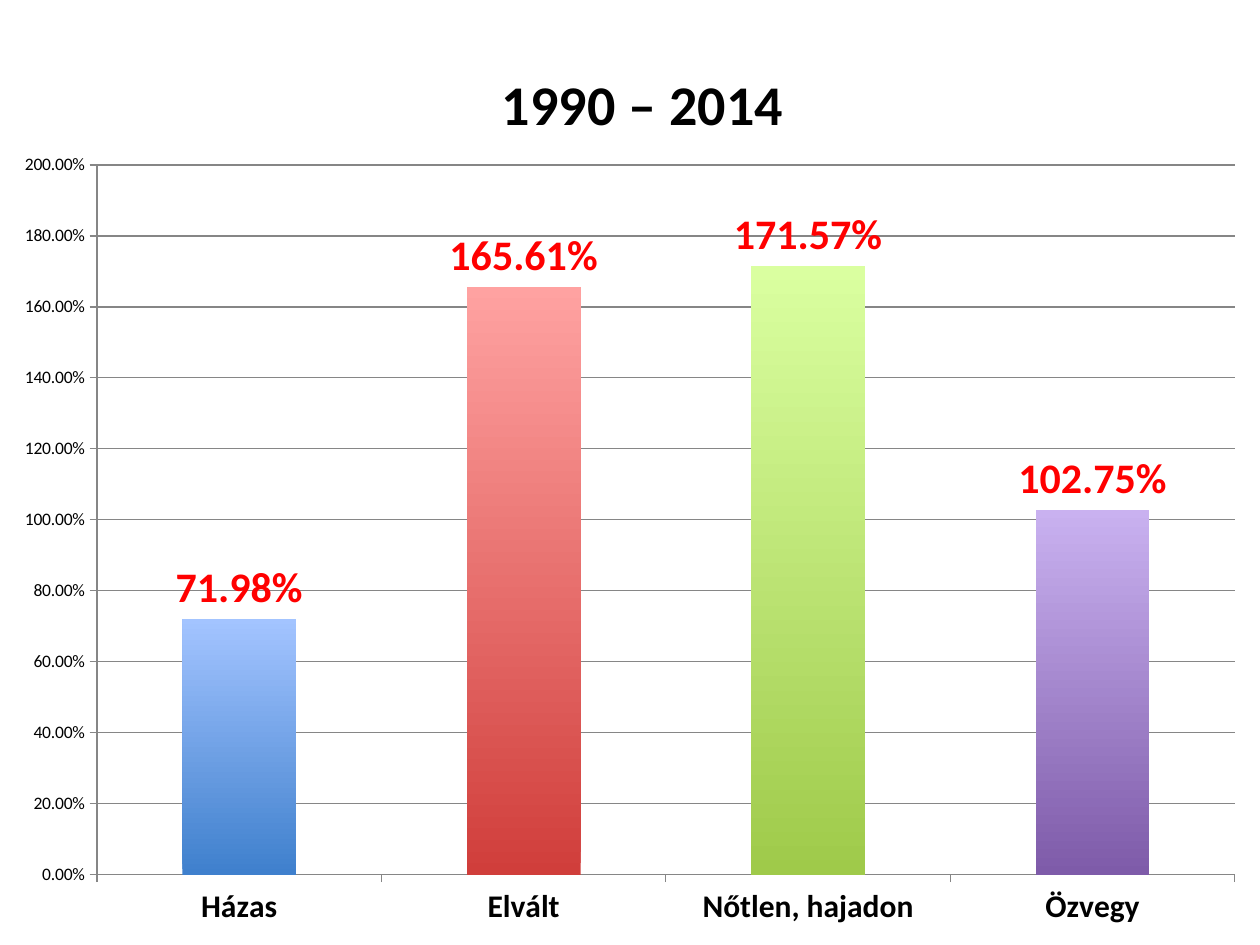
import pptx
import pptx.chart.data
import pptx.dml.color
import pptx.enum.chart
import pptx.oxml
import pptx.util
from pptx.util import Inches

BLACK, RED, GREY = "000000", "FF0000", "868686"
CHART_NS = "http://schemas.openxmlformats.org/drawingml/2006/chart"


def color(value):
    return pptx.dml.color.RGBColor.from_string(value)


def manual_layout(x, y, size=None):
    """Layout in fractions of the chart area; size is for the inner plot."""
    target = '<c:layoutTarget val="inner"/>' if size else ""
    extent = f'<c:w val="{size[0]}"/><c:h val="{size[1]}"/>' if size else ""
    return pptx.oxml.parse_xml(
        f'<c:layout xmlns:c="{CHART_NS}"><c:manualLayout>{target}'
        '<c:xMode val="edge"/><c:yMode val="edge"/>'
        f'<c:x val="{x}"/><c:y val="{y}"/>{extent}</c:manualLayout></c:layout>')


deck = pptx.Presentation()
deck.slide_width, deck.slide_height = Inches(10), Inches(7.5)
page = deck.slides.add_slide(deck.slide_layouts[6])

# Marital status: category, value, light top and dark bottom of the column
statuses = [
    ("Házas", 0.7198, "A3C4FF", "3F80CD"),
    ("Elvált", 1.6561, "FFA2A1", "D03E3B"),
    ("Nőtlen, hajadon", 1.7157, "DAFFA0", "9FCA4A"),
    ("Özvegy", 1.0275, "C9B1F0", "7E5BA9"),
]
data = pptx.chart.data.CategoryChartData(number_format="0.00%")
data.categories = [status[0] for status in statuses]
data.add_series("Series 1", [status[1] for status in statuses])
chart = page.shapes.add_chart(
    pptx.enum.chart.XL_CHART_TYPE.COLUMN_CLUSTERED,
    Inches(0), Inches(0.06), Inches(10), Inches(7.44), data).chart
chart.has_legend = False
chart.font.name = "Calibri"
chart.font.size = pptx.util.Pt(10)
chart.font.color.rgb = color(BLACK)

# Title
chart.has_title = True
title = chart.chart_title
title.include_in_layout = False
title.text_frame.text = "1990 – 2014"
title_font = title.text_frame.paragraphs[0].runs[0].font
title_font.name = "Calibri"
title_font.size = pptx.util.Pt(32)
title_font.bold = True
title_font.color.rgb = color(BLACK)
for old in title._element.findall(f"{{{CHART_NS}}}layout"):
    title._element.remove(old)
title._element.find(f"{{{CHART_NS}}}tx").addnext(manual_layout(0.39, 0.05))

# Plot area
plot_area = chart._chartSpace.chart.plotArea
for old in plot_area.findall(f"{{{CHART_NS}}}layout"):
    plot_area.remove(old)
plot_area.insert(0, manual_layout(0.077, 0.168, (0.903, 0.757)))

# Axes
for axis in (chart.category_axis, chart.value_axis):
    axis.major_tick_mark = pptx.enum.chart.XL_TICK_MARK.OUTSIDE
    axis.minor_tick_mark = pptx.enum.chart.XL_TICK_MARK.NONE
    axis.format.line.color.rgb = color(GREY)
    axis.format.line.width = pptx.util.Pt(0.75)
category_font = chart.category_axis.tick_labels.font
category_font.size = pptx.util.Pt(18)
category_font.bold = True
values = chart.value_axis
values.minimum_scale, values.maximum_scale, values.major_unit = 0, 2, 0.2
values.tick_labels.number_format = "0.00%"
values.tick_labels.number_format_is_linked = False
values.has_major_gridlines = True
values.major_gridlines.format.line.color.rgb = color(GREY)
values.major_gridlines.format.line.width = pptx.util.Pt(0.75)

# Columns
plot = chart.plots[0]
plot.gap_width = 150
plot.vary_by_categories = False
series = plot.series[0]
for index, (name, value, top, bottom) in enumerate(statuses):
    fill = series.points[index].format.fill
    fill.gradient()
    fill.gradient_angle = 90
    for stop, shade in zip(fill.gradient_stops, (bottom, top)):
        stop.color.rgb = color(shade)

# Data labels
labels = series.data_labels
labels.show_value = True
labels.number_format = "0.00%"
labels.number_format_is_linked = False
labels.position = pptx.enum.chart.XL_LABEL_POSITION.OUTSIDE_END
labels.font.size = pptx.util.Pt(24)
labels.font.bold = True
labels.font.color.rgb = color(RED)

deck.save("out.pptx")
